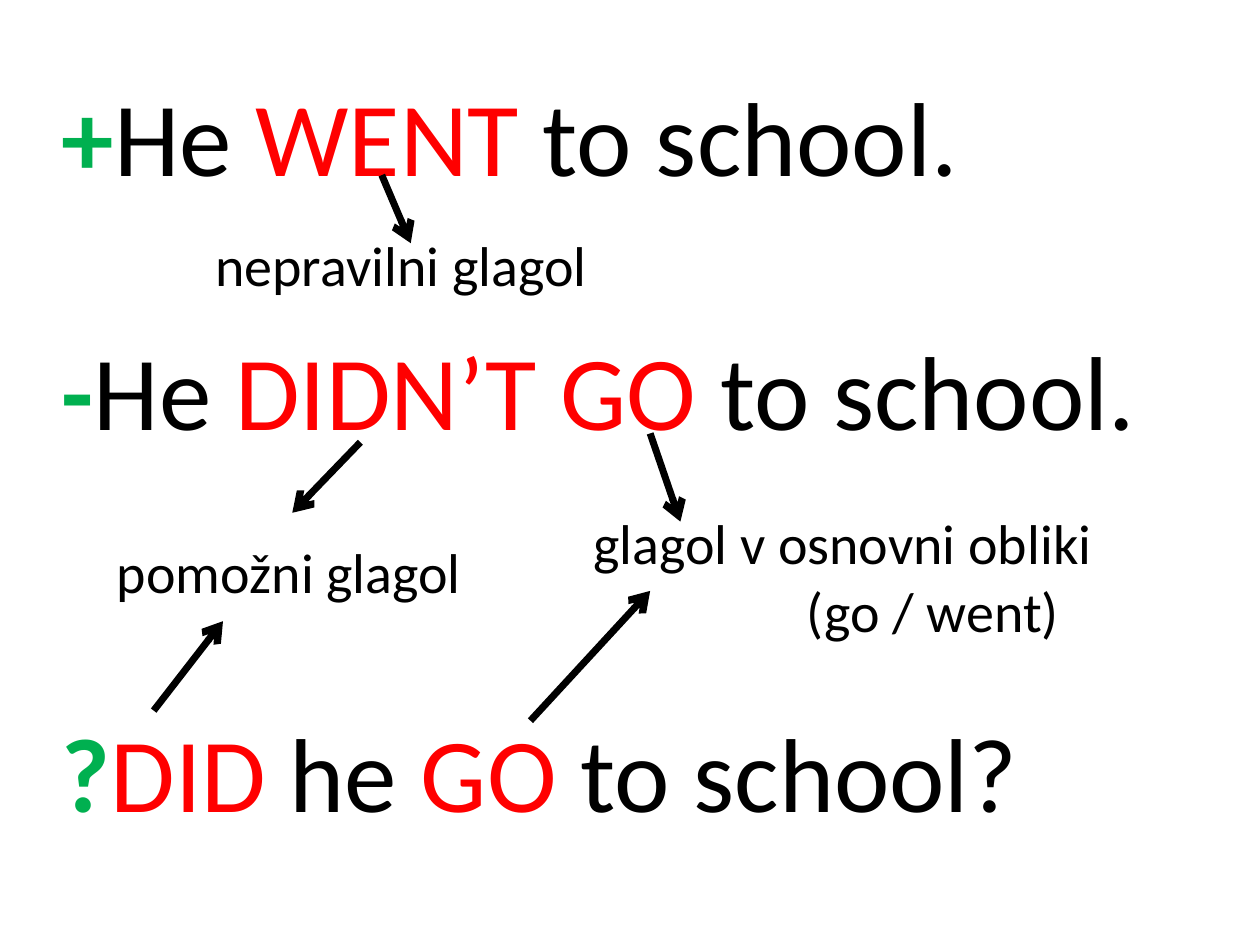
from typing import NamedTuple

from lxml import etree
from pptx import Presentation
from pptx.dml.color import RGBColor
from pptx.enum.shapes import MSO_CONNECTOR
from pptx.enum.text import MSO_AUTO_SIZE, PP_ALIGN
from pptx.oxml.ns import qn
from pptx.slide import Slide
from pptx.text.text import TextFrame
from pptx.util import Inches, Pt

STRAIGHT = MSO_CONNECTOR.STRAIGHT
FIT_SHAPE = MSO_AUTO_SIZE.SHAPE_TO_FIT_TEXT
LEFT, CENTER = PP_ALIGN.LEFT, PP_ALIGN.CENTER

BLACK = RGBColor(0x00, 0x00, 0x00)
RED = RGBColor(0xFF, 0x00, 0x00)
GREEN = RGBColor(0x00, 0xB0, 0x50)

FONT = "Calibri"
SENTENCE_SIZE = 60
LABEL_SIZE = 32
SENTENCE_LINE = 1.22 * SENTENCE_SIZE
SENTENCE_INDENT = Inches(0.29)

COLUMNS, ROWS = 100, 75
SLIDE_WIDTH, SLIDE_HEIGHT = Inches(10), Inches(7.5)


class Area(NamedTuple):
    column: float
    row: float
    columns: float
    rows: float


class Phrase(NamedTuple):
    text: str
    color: RGBColor = BLACK
    bold: bool = False


class Sentence(NamedTuple):
    lines_before: int
    phrases: list[Phrase]


class Label(NamedTuple):
    area: Area
    lines: list[tuple[str, PP_ALIGN]]


class Arrow(NamedTuple):
    start: tuple[float, float]
    end: tuple[float, float]


SENTENCES_AREA = Area(2, 5.2, 94.1, 61.6)
SENTENCES = [
    Sentence(0, [Phrase("+", GREEN, True), Phrase("He "), Phrase("WENT", RED),
                 Phrase(" to school.")]),
    Sentence(1, [Phrase("-", GREEN, True), Phrase("He "), Phrase("DIDN’T GO ", RED),
                 Phrase("to school.")]),
    Sentence(2, [Phrase("?", GREEN, True), Phrase("DID ", RED), Phrase("he "),
                 Phrase("GO ", RED), Phrase("to school?")]),
]
LABELS = [
    Label(Area(16.1, 17.8, 59.8, 6.4), [("nepravilni glagol", LEFT)]),
    Label(Area(8.3, 42.2, 36.2, 6.4), [("pomožni glagol", LEFT)]),
    Label(Area(46.1, 39.9, 55.9, 11.8),
          [("glagol v osnovni obliki", LEFT), ("(go / went)", CENTER)]),
]
ARROWS = [
    Arrow((30.3, 13.9), (32.6, 19.3)),
    Arrow((12.2, 56.4), (17.7, 49.3)),
    Arrow((28.6, 35.1), (23.2, 40.7)),
    Arrow((51.6, 34.4), (54, 41.4)),
    Arrow((42.1, 57.2), (51.6, 46.9)),
]


def across(columns: float) -> int:
    return round(SLIDE_WIDTH * columns / COLUMNS)


def down(rows: float) -> int:
    return round(SLIDE_HEIGHT * rows / ROWS)


def add_text_frame(slide: Slide, area: Area) -> TextFrame:
    frame = slide.shapes.add_textbox(
        across(area.column), down(area.row), across(area.columns), down(area.rows)
    ).text_frame
    frame.word_wrap = True
    frame.auto_size = FIT_SHAPE
    return frame


def format_run(run, size: float, color: RGBColor = BLACK, bold: bool = False) -> None:
    run.font.name = FONT
    run.font.size = Pt(size)
    run.font.bold = bold
    run.font.color.rgb = color


def draw_sentences(slide: Slide, sentences: list[Sentence]) -> None:
    frame = add_text_frame(slide, SENTENCES_AREA)
    frame.margin_left = SENTENCE_INDENT
    for index, sentence in enumerate(sentences):
        paragraph = frame.add_paragraph() if index else frame.paragraphs[0]
        paragraph.space_before = Pt(sentence.lines_before * SENTENCE_LINE)
        for phrase in sentence.phrases:
            run = paragraph.add_run()
            run.text = phrase.text
            format_run(run, SENTENCE_SIZE, phrase.color, phrase.bold)


def draw_label(slide: Slide, label: Label) -> None:
    frame = add_text_frame(slide, label.area)
    frame.text = "\n".join(text for text, _ in label.lines)
    for paragraph, (_, alignment) in zip(frame.paragraphs, label.lines):
        paragraph.alignment = alignment
        format_run(paragraph.runs[0], LABEL_SIZE)


def draw_arrow(slide: Slide, arrow: Arrow) -> None:
    (start_column, start_row), (end_column, end_row) = arrow
    connector = slide.shapes.add_connector(
        STRAIGHT, across(start_column), down(start_row), across(end_column), down(end_row)
    )
    connector.line.color.rgb = BLACK
    connector.line.width = Pt(4)
    properties = connector._element.spPr
    etree.SubElement(properties.find(qn("a:ln")), qn("a:tailEnd"), type="arrow")
    etree.SubElement(properties, qn("a:effectLst"))


def main() -> None:
    presentation = Presentation()
    presentation.slide_width = SLIDE_WIDTH
    presentation.slide_height = SLIDE_HEIGHT
    slide = presentation.slides.add_slide(presentation.slide_layouts[6])
    draw_sentences(slide, SENTENCES)
    for label in LABELS:
        draw_label(slide, label)
    for arrow in ARROWS:
        draw_arrow(slide, arrow)
    presentation.save("out.pptx")


if __name__ == "__main__":
    main()
